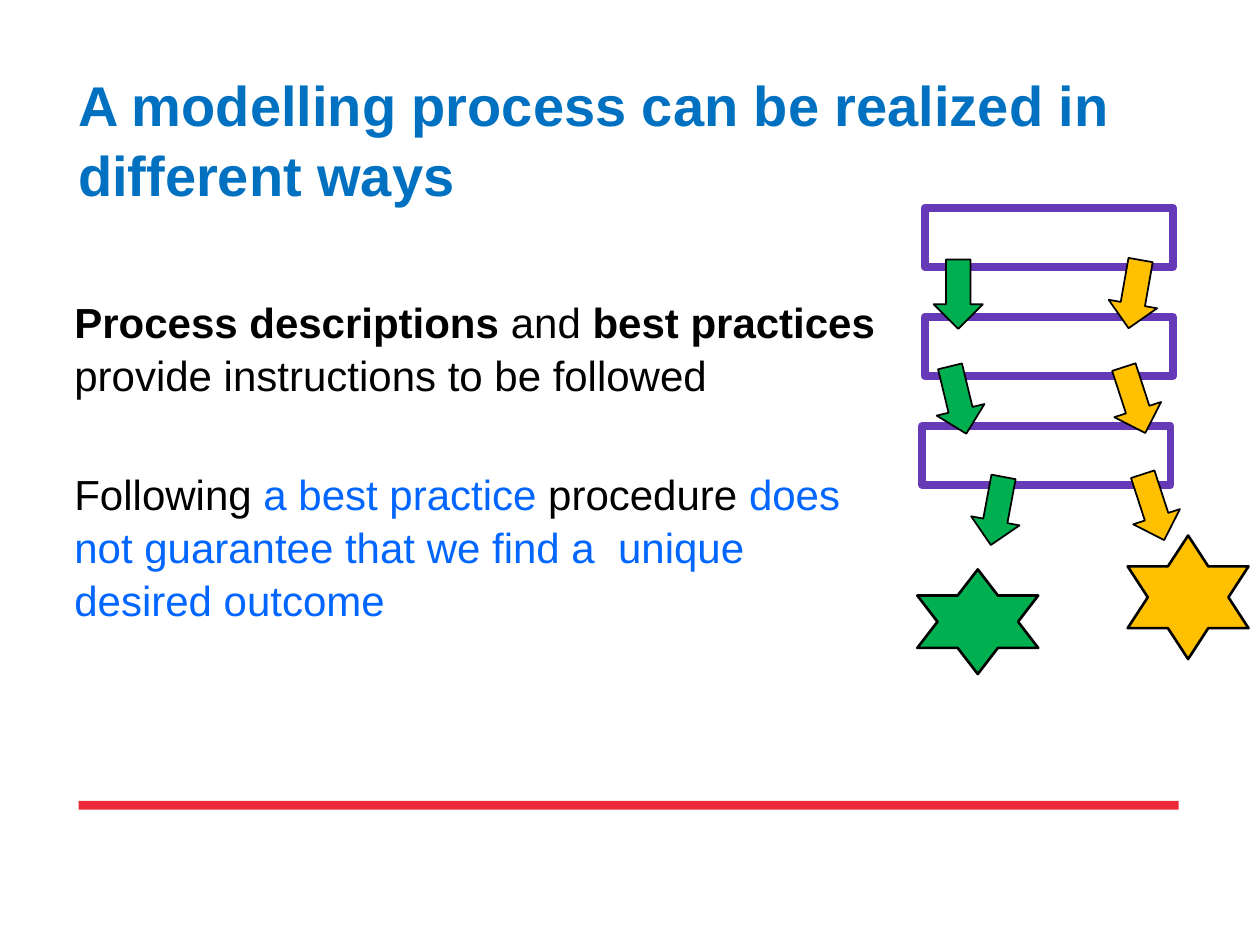
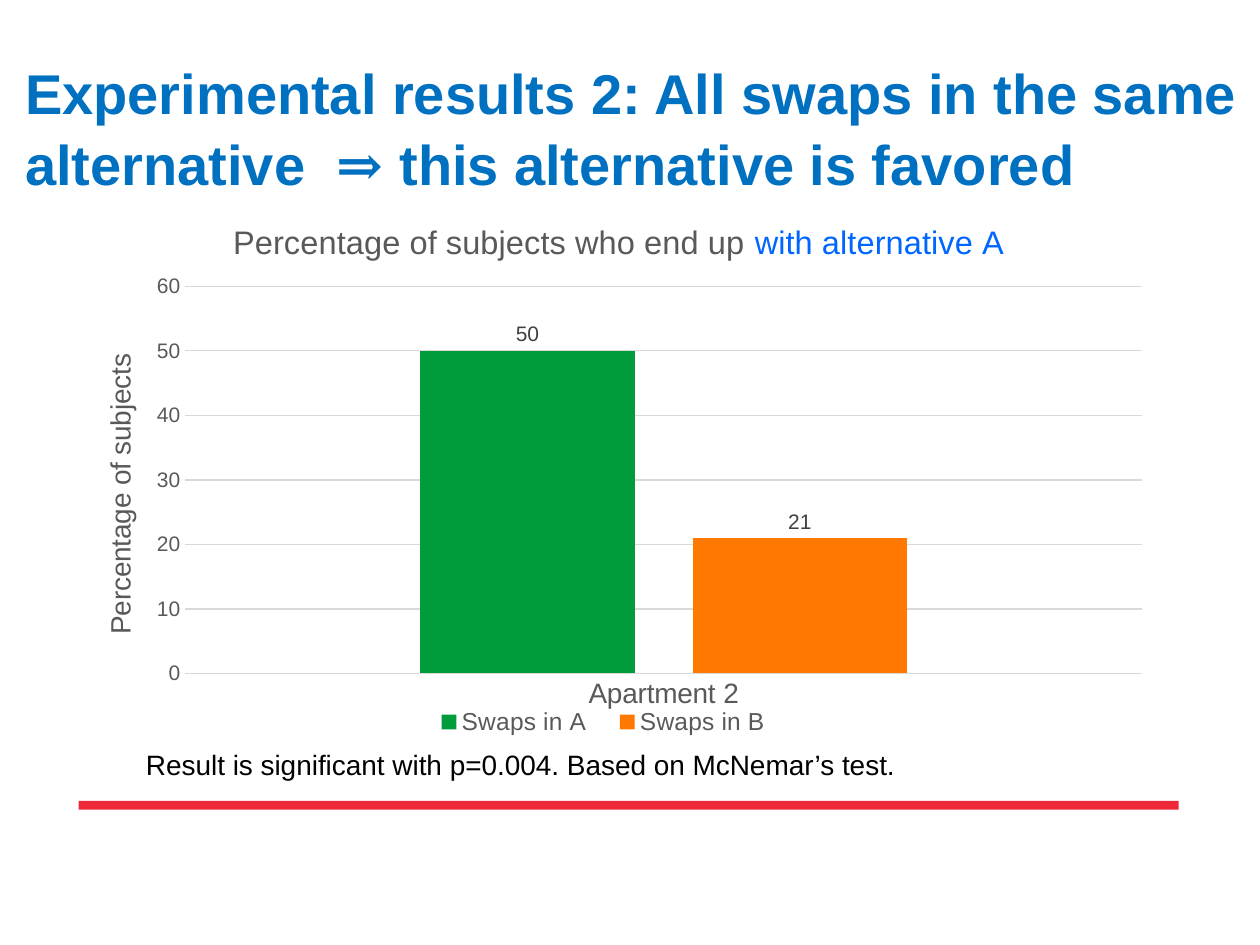
from dataclasses import dataclass

from lxml import etree
from pptx import Presentation
from pptx import util as u
from pptx.chart import data as chart_data
from pptx.dml.color import RGBColor
from pptx.enum import chart as charts, shapes, text
from pptx.oxml import ns


@dataclass(frozen=True)
class Theme:
    font: str = "Arial"
    symbol_font: str = "Cambria"
    title: str = "0070C0"
    ink: str = "000000"
    accent: str = "0066FF"
    band: str = "ED2939"
    step: str = "6639B7"
    green: str = "00B050"
    amber: str = "FFC000"
    swaps_a: str = "009B3A"
    swaps_b: str = "FF7900"
    chart_text: str = "595959"
    label_text: str = "404040"
    grid: str = "D9D9D9"
    title_size: float = 32
    body_size: float = 24
    chart_title_size: float = 18.6
    caption_size: float = 16
    legend_size: float = 14
    tick_size: float = 12
    line_spacing: float = 1.05


theme = Theme()


def add_runs(paragraph, pieces, size):
    """Each piece is (text, colour, bold) or (text, colour, bold, font)."""
    for words, colour, bold, *font in pieces:
        run = paragraph.add_run()
        run.text = words
        run.font.name = font[0] if font else theme.font
        run.font.size = u.Pt(size)
        run.font.bold = bold
        run.font.color.rgb = RGBColor.from_string(colour)


def place_chart_part(element, index, **fractions):
    """Give a chart part a fixed place, in fractions of the chart."""
    for old_layout in element.findall(ns.qn("c:layout")):
        element.remove(old_layout)
    layout = etree.Element(ns.qn("c:layout"))
    manual = etree.SubElement(layout, ns.qn("c:manualLayout"))
    if "w" in fractions and index == 0:
        etree.SubElement(manual, ns.qn("c:layoutTarget")).set("val", "inner")
    for axis in ("x", "y"):
        etree.SubElement(manual, ns.qn(f"c:{axis}Mode")).set("val", "edge")
    for name, value in fractions.items():
        etree.SubElement(manual, ns.qn(f"c:{name}")).set("val", str(value))
    element.insert(index, layout)


presentation = Presentation()
presentation.slide_width, presentation.slide_height = u.Pt(720), u.Pt(540)
title_only = presentation.slide_layouts[5]

# Slides and their titles
titles = [
    ((44.6, 38.2, 628.6, 85),
     [("A modelling process can be realized in different ways", theme.title, True)]),
    ((14.4, 31.7, 699.8, 78.5),
     [("Experimental results 2: All swaps in the same alternative  ", theme.title, True),
      ("⇒", theme.title, True, theme.symbol_font),
      (" this alternative is favored", theme.title, True)]),
]
for box, pieces in titles:
    slide = presentation.slides.add_slide(title_only)
    title = slide.shapes.title
    title.left, title.top, title.width, title.height = map(u.Pt, box)
    frame = title.text_frame
    frame.margin_left = frame.margin_top = frame.margin_right = frame.margin_bottom = 0
    frame.vertical_anchor = text.MSO_ANCHOR.TOP
    frame.auto_size = text.MSO_AUTO_SIZE.NONE
    frame.word_wrap = True
    paragraph = frame.paragraphs[0]
    paragraph.alignment = text.PP_ALIGN.LEFT
    paragraph.line_spacing = theme.line_spacing
    add_runs(paragraph, pieces, theme.title_size)
process_slide, results_slide = presentation.slides

# Red band, shared through the layout
band = process_slide.shapes.add_shape(
    shapes.MSO_SHAPE.RECTANGLE, u.Pt(44.9), u.Pt(457.7), u.Pt(628.6), u.Pt(5))
band.shadow.inherit = False
band.fill.solid()
band.fill.fore_color.rgb = RGBColor.from_string(theme.band)
band.line.fill.background()
title_only.element.cSld.spTree.append(band.element)

# Process slide: body text
body = process_slide.shapes.add_textbox(u.Pt(42.5), u.Pt(167.8), u.Pt(467.3), u.Pt(289.4))
frame = body.text_frame
frame.word_wrap = True
frame.margin_left = frame.margin_top = frame.margin_right = frame.margin_bottom = 0
statements = [
    [("Process descriptions ", theme.ink, True), ("and", theme.ink, False),
     (" best practices ", theme.ink, True),
     ("provide instructions to be followed", theme.ink, False)],
    [("Following ", theme.ink, False), ("a best practice ", theme.accent, False),
     ("procedure ", theme.ink, False),
     ("does not guarantee that we find a  unique  desired outcome", theme.accent, False)],
]
for number, pieces in enumerate(statements):
    paragraph = frame.add_paragraph() if number else frame.paragraphs[0]
    paragraph.line_spacing = theme.line_spacing
    if number:
        paragraph.space_before = u.Pt(38)
    add_runs(paragraph, pieces, theme.body_size)

# Process slide: steps, then each route's outcome and arrows
RECTANGLE, STAR, ARROW = (shapes.MSO_SHAPE.RECTANGLE, shapes.MSO_SHAPE.STAR_6_POINT,
                          shapes.MSO_SHAPE.DOWN_ARROW)
step_left, step_top, step_pitch = 528.5, 118.8, 62.3
diagram = [(RECTANGLE, (left, step_top + row * step_pitch, 141.8, 33.8), 0,
            None, theme.step, 4.5)
           for row, left in enumerate((step_left, step_left, step_left - 1.4))]
routes = [
    (theme.amber, (644.4, 306, 69.1, 70.6),
     [(634.3, 148.3, 10), (634.3, 208.8, 342), (645.1, 270, 342)]),
    (theme.green, (524.2, 325.4, 69.1, 59.8),
     [(533.5, 148.3, 0), (533.5, 208.8, 346.4), (555.8, 272.2, 10.6)]),
]
for colour, outcome, arrows in routes:
    diagram.append((STAR, outcome, 0, colour, theme.ink, 1.5))
    for left, top, angle in arrows:
        diagram.append((ARROW, (left, top, 28.1, 39.6), angle, colour, theme.ink, 1))
for kind, box, angle, fill, line, weight in diagram:
    shape = process_slide.shapes.add_shape(kind, *map(u.Pt, box))
    shape.shadow.inherit = False
    shape.rotation = angle
    if fill:
        shape.fill.solid()
        shape.fill.fore_color.rgb = RGBColor.from_string(fill)
    else:
        shape.fill.background()
    shape.line.color.rgb = RGBColor.from_string(line)
    shape.line.width = u.Pt(weight)

# Results slide: chart
swaps = chart_data.CategoryChartData()
swaps.categories = ["Apartment 2"]
swaps.add_series("Swaps in A", [50])
swaps.add_series("Swaps in B", [21])
chart = results_slide.shapes.add_chart(
    charts.XL_CHART_TYPE.COLUMN_CLUSTERED,
    u.Pt(36.7), u.Pt(111.6), u.Pt(628.6), u.Pt(325.4), swaps).chart
chart.font.name = theme.font
chart.font.size = u.Pt(10)
chart.has_title = True
add_runs(chart.chart_title.text_frame.paragraphs[0],
         [("Percentage of subjects who end up ", theme.chart_text, False),
          ("with alternative A", theme.accent, False)], theme.chart_title_size)

# Results slide: columns and their labels
plot = chart.plots[0]
plot.gap_width, plot.overlap = 219, -27
plot.vary_by_categories = False
for series, colour in zip(plot.series, (theme.swaps_a, theme.swaps_b)):
    series.format.fill.solid()
    series.format.fill.fore_color.rgb = RGBColor.from_string(colour)
    labels = series.data_labels
    labels.show_value = True
    labels.position = charts.XL_LABEL_POSITION.OUTSIDE_END
    labels.font.name = theme.font
    labels.font.size = u.Pt(theme.tick_size)
    labels.font.color.rgb = RGBColor.from_string(theme.label_text)

# Results slide: axes and legend
category_axis, value_axis = chart.category_axis, chart.value_axis
chart.has_legend = True
chart.legend.position = charts.XL_LEGEND_POSITION.BOTTOM
chart.legend.include_in_layout = False
for font, size in ((category_axis.tick_labels.font, theme.caption_size),
                   (value_axis.tick_labels.font, theme.tick_size),
                   (chart.legend.font, theme.legend_size)):
    font.name = theme.font
    font.size = u.Pt(size)
    font.color.rgb = RGBColor.from_string(theme.chart_text)
for axis in (category_axis, value_axis):
    axis.major_tick_mark = axis.minor_tick_mark = charts.XL_TICK_MARK.NONE
value_axis.minimum_scale, value_axis.maximum_scale, value_axis.major_unit = 0, 60, 10
value_axis.format.line.fill.background()
for line in (category_axis.format.line, value_axis.major_gridlines.format.line):
    line.color.rgb = RGBColor.from_string(theme.grid)
    line.width = u.Pt(0.75)
value_title = value_axis.axis_title
add_runs(value_title.text_frame.paragraphs[0],
         [("Percentage of subjects", theme.chart_text, False)], theme.caption_size)
body_properties = value_title.element.find(".//" + ns.qn("a:bodyPr"))
body_properties.set("rot", "-5400000")
body_properties.set("vert", "horz")

# Results slide: places of the chart parts
chart_root = chart.element.find(ns.qn("c:chart"))
place_chart_part(chart_root.find(ns.qn("c:plotArea")), 0, x=0.11, y=0.16, w=0.87, h=0.68)
place_chart_part(chart_root.find(ns.qn("c:title")), 1, x=0.15, y=0.04)
place_chart_part(value_title.element, 1, x=0.03, y=0.27)
place_chart_part(chart_root.find(ns.qn("c:legend")), 1, x=0.32, y=0.9, w=0.34, h=0.05)

# Results slide: significance note
note = results_slide.shapes.add_textbox(u.Pt(76.3), u.Pt(423.4), u.Pt(635), u.Pt(26.6))
note.text_frame.word_wrap = True
add_runs(note.text_frame.paragraphs[0],
         [("Result is significant with p=0.004. Based on McNemar’s test.", theme.ink, False)],
         theme.caption_size)

presentation.save("out.pptx")
